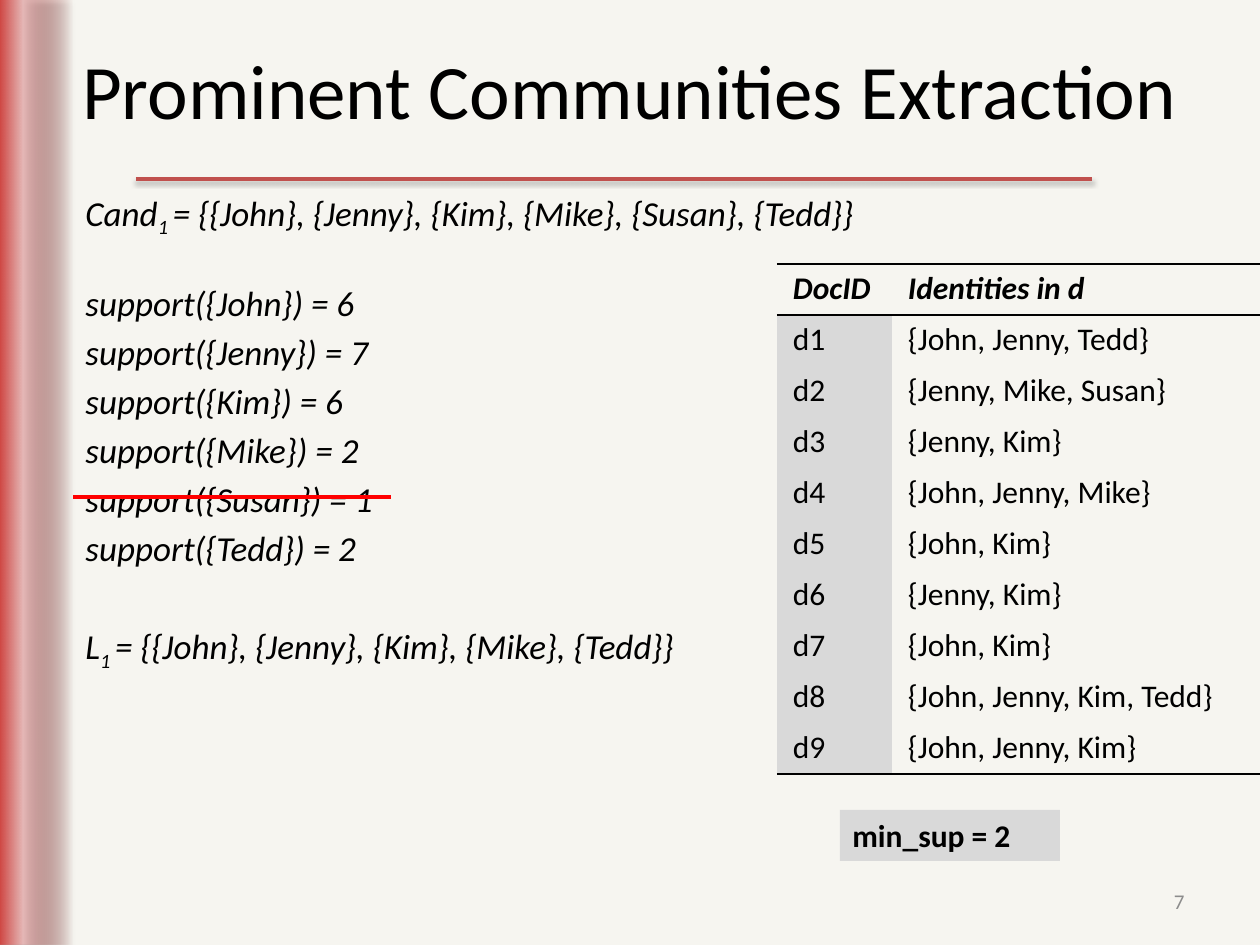
import pptx
import pptx.util
import pptx.oxml
import pptx.dml.color
import pptx.enum.shapes
import pptx.enum.text

PX = 914400 // 126
NS = 'xmlns:a="http://schemas.openxmlformats.org/drawingml/2006/main"'
NO_STYLE_NO_GRID = "{2D5ABB26-0587-4C30-8999-92F81FD0307C}"
ALIGN = pptx.enum.text.PP_ALIGN
ANCHOR = pptx.enum.text.MSO_ANCHOR

TITLE = "Prominent Communities Extraction"
# (space before in points, [(text, is subscript), ...])
STEPS = [
    (4, [("Cand", False), ("1 ", True),
         ("= {{John}, {Jenny}, {Kim}, {Mike}, {Susan}, {Tedd}}", False)]),
    (24.5, [("support({John}) = 6", False)]),
    (4, [("support({Jenny}) = 7", False)]),
    (4, [("support({Kim}) = 6", False)]),
    (4, [("support({Mike}) = 2", False)]),
    (4, [("support({Susan}) = 1", False)]),
    (4, [("support({Tedd}) = 2", False)]),
    (32, [("L", False), ("1 ", True),
          ("= {{John}, {Jenny}, {Kim}, {Mike}, {Tedd}}", False)]),
]
DOCUMENTS = [
    ("DocID", "Identities in d"),
    ("d1", "{John, Jenny, Tedd}"),
    ("d2", "{Jenny, Mike, Susan}"),
    ("d3", "{Jenny, Kim}"),
    ("d4", "{John, Jenny, Mike}"),
    ("d5", "{John, Kim}"),
    ("d6", "{Jenny, Kim}"),
    ("d7", "{John, Kim}"),
    ("d8", "{John, Jenny, Kim, Tedd}"),
    ("d9", "{John, Jenny, Kim}"),
]
COLUMN_WIDTHS = (115, 368)
ROW_HEIGHT = 51
THRESHOLD = "min_sup = 2"
PAGE = "7"


def px(*lengths):
    return [length * PX for length in lengths]


def rgb(color):
    return pptx.dml.color.RGBColor.from_string(color)


def xml(text):
    return pptx.oxml.parse_xml(text.replace(">", f" {NS}>", 1))


def write(paragraph, text, size, color="000000", bold=False, italic=False,
          subscript=False, align=None):
    run = paragraph.add_run()
    run.text = text
    run.font.name = "Calibri"
    run.font.size = pptx.util.Pt(size)
    run.font.color.rgb = rgb(color)
    run.font.bold = bold
    run.font.italic = italic
    if subscript:
        run.font._element.set("baseline", "-25000")
    if align is not None:
        paragraph.alignment = align


def add_frame(slide, box, anchor=ANCHOR.TOP):
    frame = slide.shapes.add_textbox(*px(*box)).text_frame
    frame.word_wrap = True
    frame.vertical_anchor = anchor
    return frame


def shadow(alpha, distance):
    return xml(f'<a:effectLst><a:outerShdw blurRad="39370" dist="{distance}" dir="5400000" '
               f'rotWithShape="0"><a:srgbClr val="000000"><a:alpha val="{alpha}000"/>'
               '</a:srgbClr></a:outerShdw></a:effectLst>')


def add_rule(slide, ends, color, effect):
    rule = slide.shapes.add_connector(pptx.enum.shapes.MSO_CONNECTOR.STRAIGHT, *px(*ends))
    rule.line.color.rgb = rgb(color)
    rule.line.width = pptx.util.Pt(2)
    rule._element.spPr.append(effect)


def add_rectangle(slide, box):
    rectangle = slide.shapes.add_shape(pptx.enum.shapes.MSO_SHAPE.RECTANGLE, *px(*box))
    rectangle.line.fill.background()
    return rectangle


def add_side_band(slide):
    band = add_rectangle(slide, (-2, 0, 75, 945))
    properties = band._element.spPr
    gradient = xml(
        '<a:gradFill rotWithShape="1"><a:gsLst>'
        '<a:gs pos="0"><a:srgbClr val="953735"><a:alpha val="0"/></a:srgbClr></a:gs>'
        '<a:gs pos="66000"><a:srgbClr val="E6B9B8"/></a:gs>'
        '<a:gs pos="100000"><a:srgbClr val="CE3B37"/></a:gs>'
        '</a:gsLst><a:lin ang="10800000" scaled="0"/></a:gradFill>')
    properties.insert(2, gradient)
    properties.append(shadow(35, 22860))


def add_documents(slide):
    last = len(DOCUMENTS) - 1
    table = slide.shapes.add_table(
        len(DOCUMENTS), len(COLUMN_WIDTHS),
        *px(777, 264, sum(COLUMN_WIDTHS), ROW_HEIGHT * len(DOCUMENTS))).table
    table._tbl.tblPr.find(pptx.oxml.ns.qn("a:tableStyleId")).text = NO_STYLE_NO_GRID
    table.first_row = table.horz_banding = False
    for column, width in zip(table.columns, COLUMN_WIDTHS):
        column.width = width * PX
    for r, record in enumerate(DOCUMENTS):
        table.rows[r].height = ROW_HEIGHT * PX
        heading = r == 0
        edges = ("lnT", "lnB") if heading else ("lnB",) if r == last else ()
        for c, text in enumerate(record):
            cell = table.cell(r, c)
            cell.margin_left = cell.margin_right = 16 * PX
            cell.margin_top = cell.margin_bottom = 6 * PX
            write(cell.text_frame.paragraphs[0], text, 18, bold=heading, italic=heading)
            for edge in edges:
                cell._tc.get_or_add_tcPr().append(xml(
                    f'<a:{edge} w="12700"><a:solidFill><a:srgbClr val="000000"/>'
                    f'</a:solidFill></a:{edge}>'))
            if c == 0 and not heading:
                cell.fill.solid()
                cell.fill.fore_color.rgb = rgb("D9D9D9")
            else:
                cell.fill.background()


def main():
    deck = pptx.Presentation()
    deck.slide_width, deck.slide_height = px(1260, 945)
    slide = deck.slides.add_slide(deck.slide_layouts[5])
    slide.background.fill.solid()
    slide.background.fill.fore_color.rgb = rgb("F6F5F0")

    add_side_band(slide)
    add_rule(slide, (136, 179, 1092, 179), "C0504D", shadow(38, 20320))

    title = slide.shapes.title
    title.left, title.top, title.width, title.height = px(63, 10, 1134, 158)
    title.text_frame.vertical_anchor = ANCHOR.MIDDLE
    write(title.text_frame.paragraphs[0], TITLE, 44, align=ALIGN.CENTER)

    steps = add_frame(slide, (73, 185, 829, 624))
    for i, (space, pieces) in enumerate(STEPS):
        paragraph = steps.add_paragraph() if i else steps.paragraphs[0]
        paragraph.space_before = pptx.util.Pt(space)
        for text, subscript in pieces:
            write(paragraph, text, 20, italic=True, subscript=subscript)

    page = add_frame(slide, (903, 876, 294, 50), ANCHOR.MIDDLE)
    write(page.paragraphs[0], PAGE, 12, color="8C8C8C", align=ALIGN.RIGHT)

    add_documents(slide)

    threshold = add_rectangle(slide, (840, 810, 220, 51))
    threshold.shadow.inherit = False
    threshold.fill.solid()
    threshold.fill.fore_color.rgb = rgb("D9D9D9")
    threshold.text_frame.vertical_anchor = ANCHOR.TOP
    write(threshold.text_frame.paragraphs[0], THRESHOLD, 18, bold=True, align=ALIGN.LEFT)

    add_rule(slide, (391, 497, 73, 497), "FF0000", xml("<a:effectLst></a:effectLst>"))
    deck.save("out.pptx")


if __name__ == "__main__":
    main()
